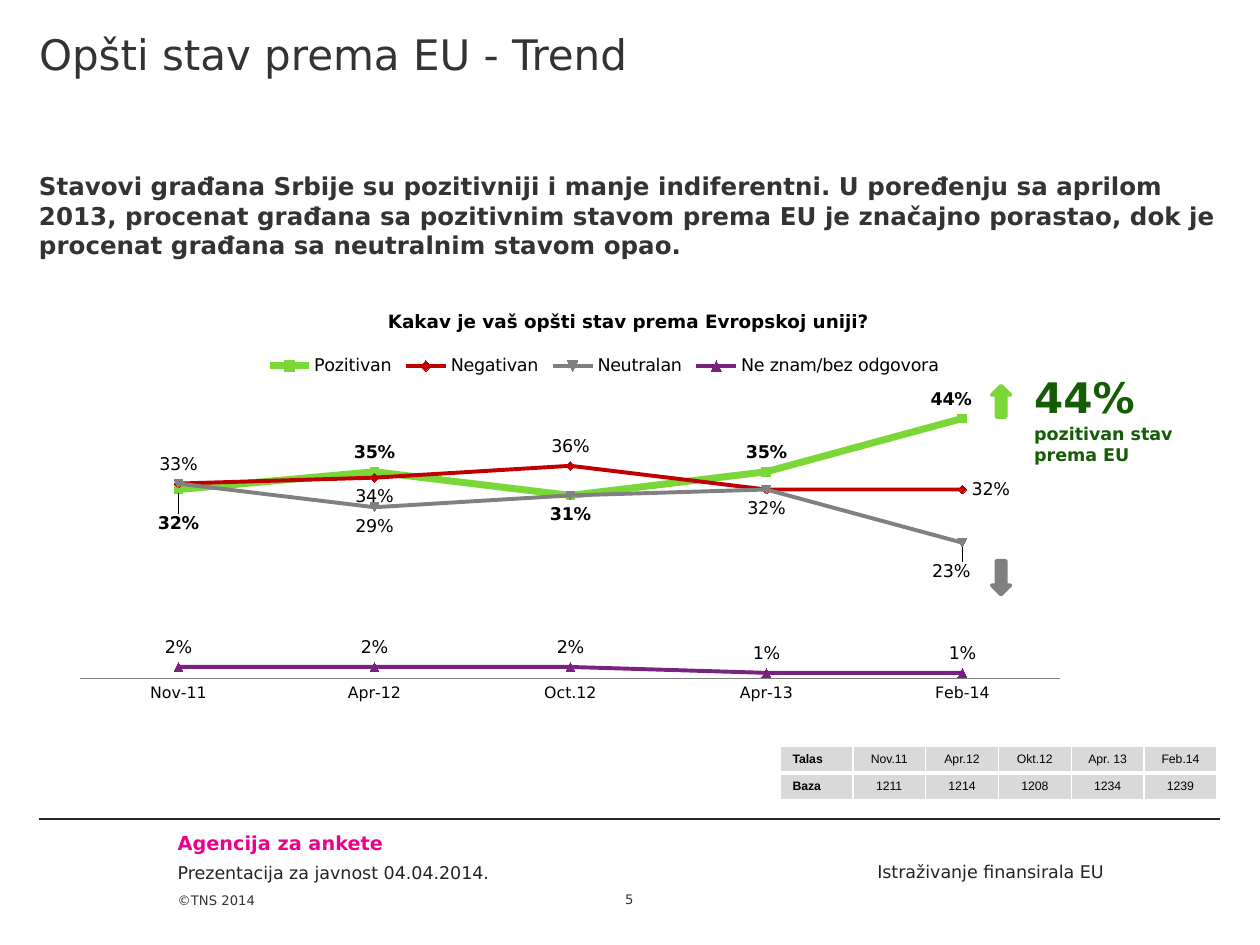
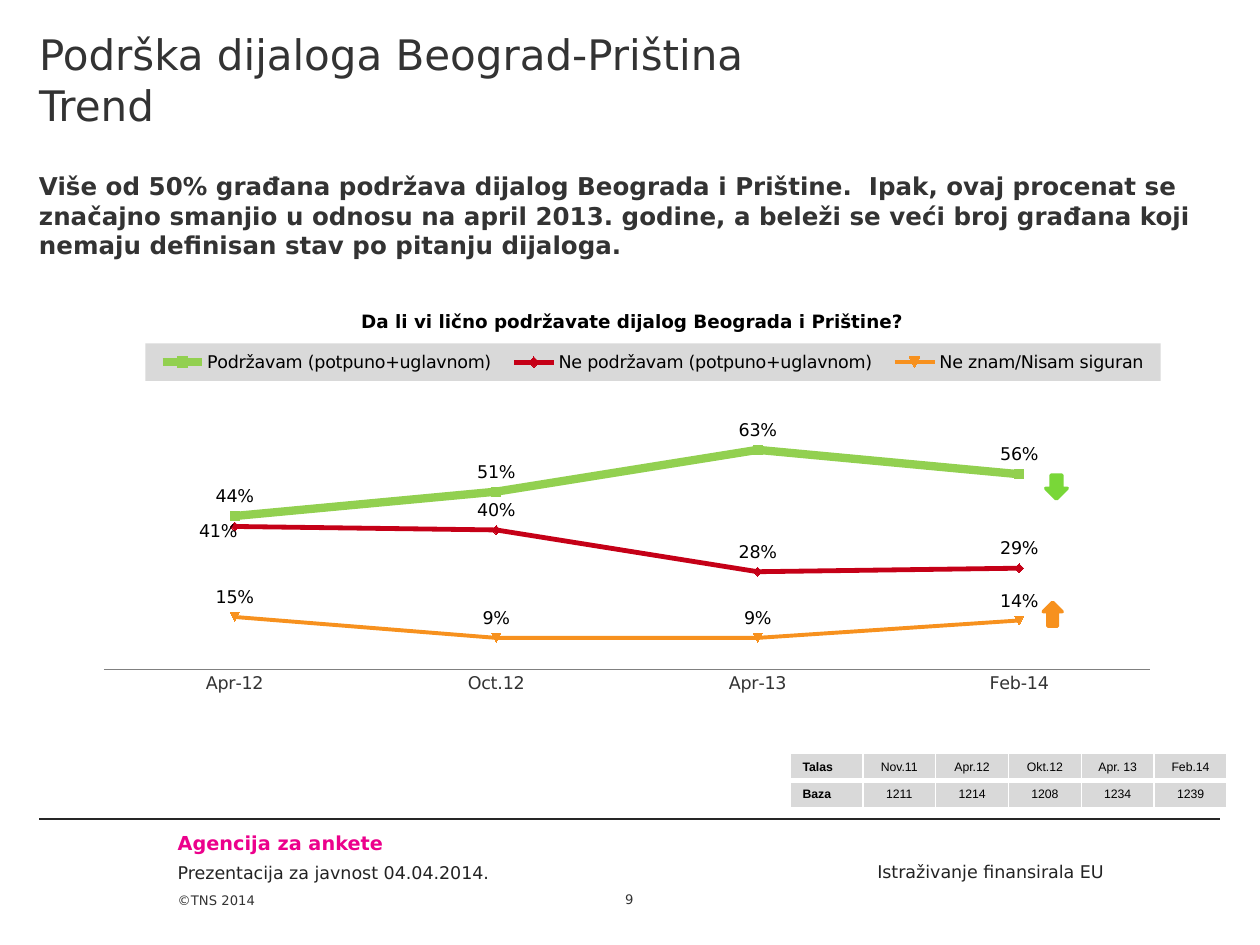
from lxml import etree
from pptx import Presentation
from pptx import util as u
from pptx.chart.data import CategoryChartData
from pptx.dml.color import RGBColor
from pptx.enum import chart as ch, shapes, text
from pptx.oxml import parse_xml
from pptx.oxml.ns import nsdecls, qn


class Theme:
    font, table_font = "DejaVu Sans", "Arial"
    ink, black, footer, rule = "333333", "000000", "232323", "262626"
    brand, accent = "EC008C", "145D04"
    grey, band, white = "808080", "D9D9D9", "FFFFFF"
    green, red, purple = "79D738", "C00000", "7A2280"
    lime, crimson, orange = "92D050", "C50017", "F7911E"
    title, lead, name, question, note = 24, 14, 11, 10.5, 10
    axis, small, cell = 9, 7.5, 7


PERCENT = r"0\%"
ABOVE, BELOW = ch.XL_LABEL_POSITION.ABOVE, ch.XL_LABEL_POSITION.BELOW
LEFT, RIGHT = ch.XL_LABEL_POSITION.LEFT, ch.XL_LABEL_POSITION.RIGHT
UP, DOWN = shapes.MSO_SHAPE.UP_ARROW, shapes.MSO_SHAPE.DOWN_ARROW
ALIGN, ANCHOR = text.PP_ALIGN, text.MSO_ANCHOR


def write(sp, words, size, color, bold=False, align=ALIGN.LEFT, anchor=ANCHOR.TOP,
          insets=(0, 0, 0, 0), wrap=True):
    tf = sp.text_frame
    tf.text = words
    tf.word_wrap = wrap
    tf.auto_size = text.MSO_AUTO_SIZE.NONE
    tf.vertical_anchor = anchor
    tf.margin_left, tf.margin_top, tf.margin_right, tf.margin_bottom = map(u.Inches, insets)
    for p in tf.paragraphs:
        p.alignment = align
        for r in p.runs:
            r.font.name, r.font.size, r.font.bold = Theme.font, u.Pt(size), bold
            r.font.color.rgb = RGBColor.from_string(color)


def place(parent, index, x, y, w=None, h=None, mode="edge"):
    for old in parent.findall(qn("c:layout")):
        parent.remove(old)
    parts = [("layoutTarget", "inner")] if parent.tag == qn("c:plotArea") else []
    parts += [("xMode", mode), ("yMode", mode), ("x", x), ("y", y)]
    if w is not None:
        parts += [("w", w), ("h", h)]
    inner = "".join(f'<c:{tag} val="{val}"/>' for tag, val in parts)
    parent.insert(index, parse_xml(
        f'<c:layout {nsdecls("c")}><c:manualLayout>{inner}</c:manualLayout></c:layout>'))


slides = [
    dict(
        title="Opšti stav prema EU - Trend", number="5",
        lead="Stavovi građana Srbije su pozitivniji i manje indiferentni. U poređenju sa "
             "aprilom 2013, procenat građana sa pozitivnim stavom prema EU je značajno "
             "porastao, dok je procenat građana sa neutralnim stavom opao.",
        question="Kakav je vaš opšti stav prema Evropskoj uniji?",
        box=(0.37, 2.27, 8.94, 3.85), plot=(0.03, 0.2, 0.87, 0.61),
        question_at=(0.3, 0.04), legend=(0.19, 0.13, 0.61, 0.07), legend_fill=None,
        top=50, axis=(Theme.axis, Theme.black),
        cats=["Nov-11", "Apr-12", "Oct.12", "Apr-13", "Feb-14"],
        series=[
            ("Pozitivan", (32, 35, 31, 35, 44), Theme.green, 4, True,
             {0: (BELOW, 0, 0.03, True), 2: None, 4: (ABOVE, -0.01, 0, True)}),
            ("Negativan", (33, 34, 36, 32, 32), Theme.red, 2.25, False,
             {0: None, 1: (BELOW, 0, 0, False), 3: None, 4: (RIGHT, 0, 0, False)}),
            ("Neutralan", (33, 29, 31, 32, 23), Theme.grey, 2.25, False,
             {1: (BELOW, 0, 0, False), 2: (BELOW, 0, 0, True), 3: (BELOW, 0, 0, False),
              4: (BELOW, -0.01, 0.02, False)}),
            ("Ne znam/bez odgovora", (2, 2, 2, 1, 1), Theme.purple, 2.25, False, {}),
        ],
        arrows=[(UP, 7.87, 3.06, 0.15, 0.25, Theme.green),
                (DOWN, 7.87, 4.45, 0.15, 0.27, Theme.grey)],
        table_at=(6.19, 5.92),
        callout=[("44%", 8.11, 2.9, 1.11, 0.42, Theme.title),
                 ("pozitivan stav\nprema EU", 8.11, 3.31, 1.35, 0.44, Theme.note)],
    ),
    dict(
        title="Podrška dijaloga Beograd-Priština \vTrend", number="9",
        lead="Više od 50% građana podržava dijalog Beograda i Prištine.  Ipak, ovaj procenat "
             "se značajno smanjio u odnosu na april 2013. godine, a beleži se veći broj "
             "građana koji nemaju definisan stav po pitanju dijaloga.",
        question="Da li vi lično podržavate dijalog Beograda i Prištine?",
        box=(0.31, 2.26, 9.37, 4.24), plot=(0.055, 0.068, 0.886, 0.652),
        question_at=(0.27, 0.04), legend=(0.09, 0.11, 0.86, 0.07), legend_fill=Theme.band,
        top=100, axis=(Theme.note, Theme.ink),
        cats=["Apr-12", "Oct.12", "Apr-13", "Feb-14"],
        series=[
            ("Podržavam (potpuno+uglavnom)", (44, 51, 63, 56), Theme.lime, 4.75, False, {}),
            ("Ne podržavam (potpuno+uglavnom)", (41, 40, 28, 29), Theme.crimson, 2.75, False,
             {0: (LEFT, 0.01, 0.01, False)}),
            ("Ne znam/Nisam siguran", (15, 9, 9, 14), Theme.orange, 2.25, False, {}),
        ],
        arrows=[(DOWN, 8.3, 3.77, 0.17, 0.19, Theme.green),
                (UP, 8.28, 4.78, 0.15, 0.19, Theme.orange)],
        table_at=(6.27, 5.98),
        callout=[],
    ),
]

waves = [("Talas", "Nov.11", "Apr.12", "Okt.12", "Apr. 13", "Feb.14"),
         ("Baza", "1211", "1214", "1208", "1234", "1239")]

footers = [
    ("©TNS 2014", (1.41, 6.92, 0.83, 0.58), Theme.small, Theme.ink,
     dict(anchor=ANCHOR.BOTTOM, insets=(0, 0, 0, 0.29), wrap=False)),
    ("Agencija za ankete", (1.41, 6.6, 3.31, 0.19), Theme.name, Theme.brand, dict(bold=True)),
    ("Prezentacija za javnost 04.04.2014.", (1.41, 6.84, 3.31, 0.17), Theme.note,
     Theme.footer, {}),
    ("Istraživanje finansirala EU", (5.36, 6.83, 3.4, 0.17), Theme.note, Theme.footer,
     dict(align=ALIGN.RIGHT)),
]

prs = Presentation()
prs.slide_width, prs.slide_height = u.Inches(10), u.Inches(7.5)

for d in slides:
    s = prs.slides.add_slide(prs.slide_layouts[5])

    sp = s.shapes.title
    sp.left, sp.top, sp.width, sp.height = map(u.Inches, (0.31, 0, 9.37, 1.13))
    write(sp, d["title"], Theme.title, Theme.ink, insets=(0, 0.23, 0, 0))

    rule = s.shapes.add_connector(shapes.MSO_CONNECTOR.STRAIGHT, u.Inches(0.31),
                                  u.Inches(6.5), u.Inches(9.68), u.Inches(6.5))
    rule.line.color.rgb = RGBColor.from_string(Theme.rule)
    rule.line.width = u.Pt(0.75)
    etree.SubElement(rule._element.spPr, qn("a:effectLst"))

    number = (d["number"], (4.72, 6.92, 0.55, 0.28), Theme.small, Theme.ink,
              dict(align=ALIGN.CENTER, anchor=ANCHOR.BOTTOM))
    lead = (d["lead"], (0.31, 1.13, 9.37, 0.83), Theme.lead, Theme.ink,
            dict(bold=True, insets=(0, 0.23, 0, 0)))
    for words, box, size, color, style in footers + [number, lead]:
        sp = s.shapes.add_textbox(*map(u.Inches, box))
        write(sp, words, size, color, **style)

    data = CategoryChartData(number_format=PERCENT)
    data.categories = d["cats"]
    for name, values, *_ in d["series"]:
        data.add_series(name, values)
    chart = s.shapes.add_chart(ch.XL_CHART_TYPE.LINE_MARKERS,
                               *map(u.Inches, d["box"]), data).chart
    chart.font.name, chart.font.size = Theme.font, u.Pt(18)
    chart.font.color.rgb = RGBColor.from_string(Theme.black)

    chart.has_title = True
    tf = chart.chart_title.text_frame
    tf.text = d["question"]
    font = tf.paragraphs[0].runs[0].font
    font.name, font.size, font.bold = Theme.font, u.Pt(Theme.question), True
    font.color.rgb = RGBColor.from_string(Theme.black)
    place(chart.chart_title._element, 1, *d["question_at"])

    chart.has_legend = True
    legend = chart.legend
    legend.position = ch.XL_LEGEND_POSITION.TOP
    legend.include_in_layout = False
    legend.font.name, legend.font.size = Theme.font, u.Pt(Theme.note)
    place(legend._element, 1, *d["legend"])
    if d["legend_fill"]:
        legend._element.find(qn("c:overlay")).addnext(parse_xml(
            f'<c:spPr {nsdecls("c", "a")}><a:solidFill>'
            f'<a:srgbClr val="{d["legend_fill"]}"/></a:solidFill></c:spPr>'))

    place(chart._chartSpace.chart.plotArea, 0, *d["plot"])
    val, cat = chart.value_axis, chart.category_axis
    val.visible = val.has_major_gridlines = False
    val.minimum_scale, val.maximum_scale = 0, d["top"]
    cat.major_tick_mark = ch.XL_TICK_MARK.NONE
    cat.format.line.color.rgb = RGBColor.from_string(Theme.grey)
    cat.format.line.width = u.Pt(0.75)
    font = cat.tick_labels.font
    font.name, font.size = Theme.font, u.Pt(d["axis"][0])
    font.color.rgb = RGBColor.from_string(d["axis"][1])

    plot = chart.plots[0]
    plot.vary_by_categories = False
    for ser, (_, _, color, width, bold, points) in zip(plot.series, d["series"]):
        rgb = RGBColor.from_string(color)
        ser.smooth = False
        ser.format.line.color.rgb, ser.format.line.width = rgb, u.Pt(width)
        ser.marker.size = 5
        ser.marker.format.fill.solid()
        ser.marker.format.fill.fore_color.rgb = rgb
        ser.marker.format.line.color.rgb = rgb
        labels = ser.data_labels
        labels.show_value, labels.position = True, ABOVE
        labels.number_format, labels.number_format_is_linked = PERCENT, False
        labels.font.name, labels.font.size = Theme.font, u.Pt(Theme.note)
        labels.font.bold = bold
        for i, spec_at in points.items():
            label = ser.points[i].data_label
            label.position = spec_at[0] if spec_at else ABOVE
            el = ser._element.xpath(f'c:dLbls/c:dLbl[c:idx/@val="{i}"]')[0]
            if spec_at is None:
                for child in list(el)[1:]:
                    el.remove(child)
                etree.SubElement(el, qn("c:delete")).set("val", "1")
                continue
            _, dx, dy, strong = spec_at
            label.font.name, label.font.size = Theme.font, u.Pt(Theme.note)
            label.font.bold = strong
            el.insert(1, parse_xml(f'<c:numFmt {nsdecls("c")} formatCode="{PERCENT}" '
                                   'sourceLinked="0"/>'))
            if dx or dy:
                place(el, 1, dx, dy, mode="factor")

    for kind, x, y, w, h, color in d["arrows"]:
        sp = s.shapes.add_shape(kind, *map(u.Inches, (x, y, w, h)))
        sp.shadow.inherit = False
        sp.fill.solid()
        sp.fill.fore_color.rgb = sp.line.color.rgb = RGBColor.from_string(color)
        sp.line.width = u.Pt(2)

    table = s.shapes.add_table(2, 6, *map(u.Inches, (*d["table_at"], 3.47, 0.43))).table
    table.first_row = table.horz_banding = False
    for row, wave in zip(table.rows, waves):
        for i, (cell, words) in enumerate(zip(row.cells, wave)):
            cell.text = words
            cell.vertical_anchor = ANCHOR.MIDDLE
            cell.margin_top = cell.margin_bottom = u.Inches(0.02)
            p = cell.text_frame.paragraphs[0]
            p.alignment = ALIGN.CENTER if i else ALIGN.LEFT
            font = p.runs[0].font
            font.name, font.size, font.bold = Theme.table_font, u.Pt(Theme.cell), i == 0
            font.color.rgb = RGBColor.from_string(Theme.black)
            for side in "LRTB":
                thick = (side, wave) in (("B", waves[0]), ("T", waves[1]))
                cell._tc.get_or_add_tcPr().append(parse_xml(
                    f'<a:ln{side} {nsdecls("a")} w="{u.Pt(3 if thick else 1)}"><a:solidFill>'
                    f'<a:srgbClr val="{Theme.white}"/></a:solidFill></a:ln{side}>'))
            cell.fill.solid()
            cell.fill.fore_color.rgb = RGBColor.from_string(Theme.band)

    for words, x, y, w, h, size in d["callout"]:
        sp = s.shapes.add_textbox(*map(u.Inches, (x, y, w, h)))
        write(sp, words, size, Theme.accent, bold=True, insets=(0.1, 0.05, 0.1, 0.05),
              wrap=False)

prs.save("out.pptx")
